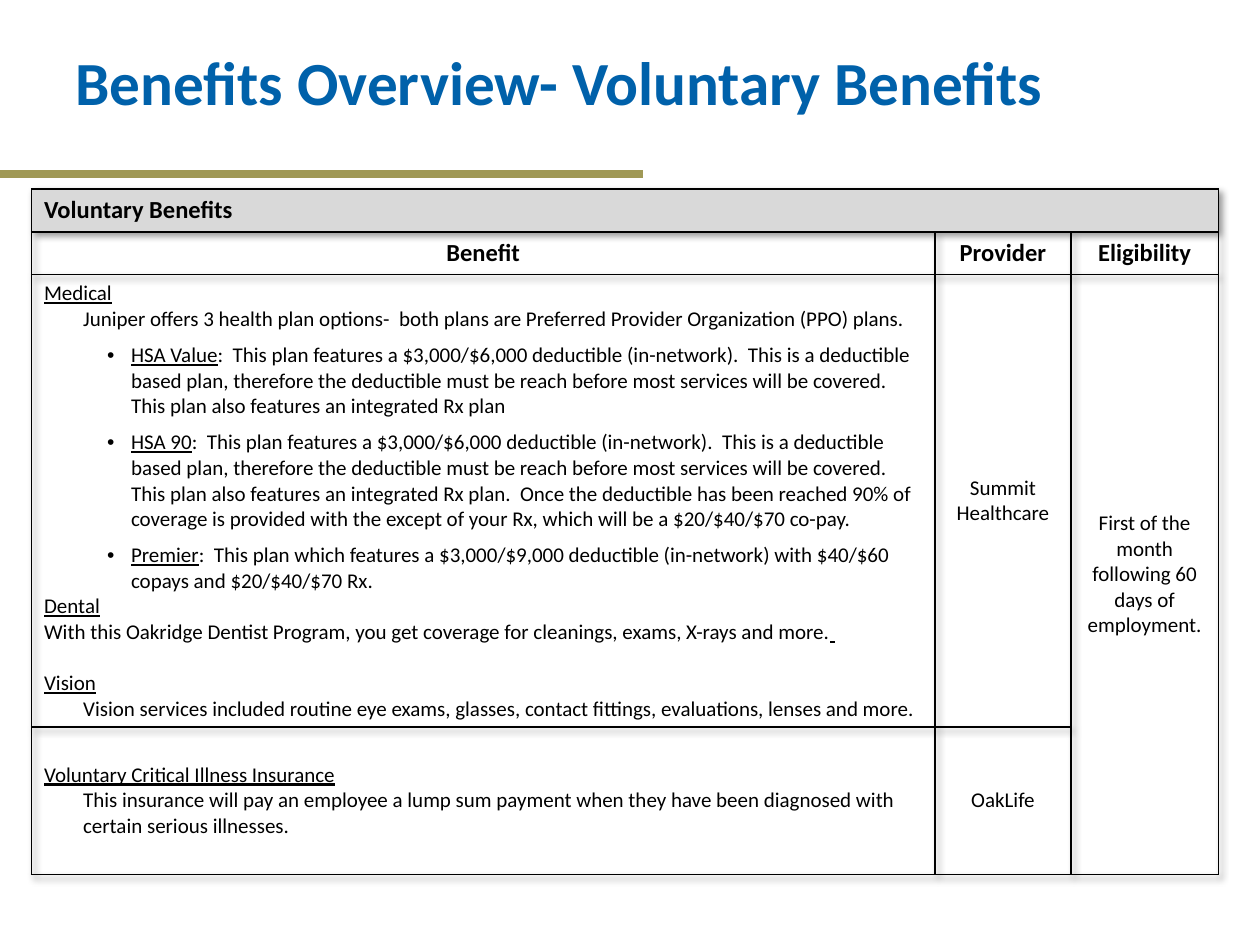
from lxml import etree
from pptx import Presentation
from pptx.dml.color import RGBColor
from pptx.enum.shapes import MSO_CONNECTOR
from pptx.enum.text import MSO_ANCHOR, PP_ALIGN
from pptx.oxml import parse_xml
from pptx.oxml.ns import nsdecls, qn
from pptx.util import Inches, Pt

STRAIGHT = MSO_CONNECTOR.STRAIGHT
MIDDLE, TOP = MSO_ANCHOR.MIDDLE, MSO_ANCHOR.TOP
LEFT, CENTER = PP_ALIGN.LEFT, PP_ALIGN.CENTER

FONT = "Calibri"
BLACK, BLUE, OLIVE, GRAY = "000000", "0061AA", "A09956", "D9D9D9"
COLUMN_WIDTHS = [7.17, 1.08, 1.17]
ROW_HEIGHTS = [0.34, 0.34, 3.59, 1.17]
BORDER_SIDES = ["lnL", "lnR", "lnT", "lnB"]

DEDUCTIBLE = (
    ":  This plan features a $3,000/$6,000 deductible (in-network).  This is a deductible "
    "based plan, therefore the deductible must be reach before most services will be covered.  "
    "This plan also features an integrated Rx plan"
)
COVERAGE = (
    ".  Once the deductible has been reached 90% of coverage is provided with the except of "
    "your Rx, which will be a $20/$40/$70 co-pay."
)
PREMIER = (
    ":  This plan which features a $3,000/$9,000 deductible (in-network) with $40/$60 copays "
    "and $20/$40/$70 Rx."
)
HEALTH_INTRO = (
    "Juniper offers 3 health plan options-  both plans are Preferred Provider Organization "
    "(PPO) plans."
)
DENTAL = (
    "With this Oakridge Dentist Program, you get coverage for cleanings, exams, X-rays and more."
)
VISION = (
    "Vision services included routine eye exams, glasses, contact fittings, evaluations, "
    "lenses and more."
)
ILLNESS = (
    "This insurance will pay an employee a lump sum payment when they have been diagnosed "
    "with certain serious illnesses."
)


def color(hex_value):
    return RGBColor.from_string(hex_value)


def heading(text, before=0):
    return {"runs": [(text, True)], "before": before}


def detail(text):
    return {"runs": [(text, False)], "margin": 0.31}


def plan(name, text):
    return {"runs": [(name, True), (text, False)], "margin": 0.69, "hanging": 0.19, "before": 6}


def write_paragraph(paragraph, runs, size=12, bold=False, hue=BLACK, align=LEFT,
                    margin=0, hanging=0, before=0):
    properties = paragraph._p.get_or_add_pPr()
    properties.set("marL", str(Inches(margin)))
    properties.set("indent", str(-Inches(hanging)))
    if hanging:
        etree.SubElement(properties, qn("a:buFont")).set("typeface", "Arial")
        etree.SubElement(properties, qn("a:buChar")).set("char", "•")
    paragraph.alignment = align
    paragraph.space_before = Pt(before)
    for text, underlined in runs:
        run = paragraph.add_run()
        run.text = text
        run.font.name, run.font.size = FONT, Pt(size)
        run.font.bold, run.font.underline = bold, underlined
        run.font.color.rgb = color(hue)


def write_text(frame, content, **style):
    paragraphs = [{"runs": [(content, False)]}] if isinstance(content, str) else content
    for index, entry in enumerate(paragraphs):
        paragraph = frame.add_paragraph() if index else frame.paragraphs[0]
        write_paragraph(paragraph, **entry, **style)


class BenefitsSlide:
    """Holds the current slide and draws each kind of element on it."""

    def __init__(self, presentation):
        self.slide = presentation.slides.add_slide(presentation.slide_layouts[6])

    def title(self, text, left, top, width, height):
        box = self.slide.shapes.add_textbox(
            Inches(left), Inches(top), Inches(width), Inches(height))
        box.text_frame.word_wrap = True
        box.text_frame.vertical_anchor = TOP
        write_text(box.text_frame, text, size=35, bold=True, hue=BLUE)

    def rule(self, start, end, y, width, hue):
        line = self.slide.shapes.add_connector(
            STRAIGHT, Inches(start), Inches(y), Inches(end), Inches(y))
        line.line.color.rgb = color(hue)
        line.line.width = Pt(width)
        etree.SubElement(line._element.spPr, qn("a:effectLst"))

    def table(self, left, top):
        frame = self.slide.shapes.add_table(
            len(ROW_HEIGHTS), len(COLUMN_WIDTHS), Inches(left), Inches(top),
            Inches(sum(COLUMN_WIDTHS)), Inches(sum(ROW_HEIGHTS)))
        table = frame.table
        table.first_row = table.horz_banding = False
        for column, width in zip(table.columns, COLUMN_WIDTHS):
            column.width = Inches(width)
        for row, height in zip(table.rows, ROW_HEIGHTS):
            row.height = Inches(height)
            for cell in row.cells:
                self.borders(cell)
                cell.fill.background()
        self.shadow(table)
        return table

    def borders(self, cell):
        properties = cell._tc.get_or_add_tcPr()
        for side in BORDER_SIDES:
            properties.append(parse_xml(
                f'<a:{side} {nsdecls("a")} w="{Pt(1)}"><a:solidFill>'
                f'<a:srgbClr val="{BLACK}"/></a:solidFill></a:{side}>'))

    def shadow(self, table):
        table._tbl.tblPr.insert(0, parse_xml(
            f'<a:effectLst {nsdecls("a")}><a:outerShdw blurRad="{Pt(4)}" dist="{Pt(3)}" '
            f'dir="2700000" algn="tl" rotWithShape="0"><a:srgbClr val="{BLACK}">'
            '<a:alpha val="40000"/></a:srgbClr></a:outerShdw></a:effectLst>'))

    def cell(self, cell, content, **style):
        cell.vertical_anchor = MIDDLE
        write_text(cell.text_frame, content, **style)


def main():
    presentation = Presentation()
    presentation.slide_width, presentation.slide_height = Inches(10), Inches(7.5)
    page = BenefitsSlide(presentation)
    page.rule(0, 5.1, 1.38, 4.5, OLIVE)
    page.title("Benefits Overview- Voluntary Benefits", 0.5, 0.3, 9, 1.25)

    benefits = page.table(0.25, 1.5)
    banner = benefits.cell(0, 0)
    banner.merge(benefits.cell(0, 2))
    banner.fill.solid()
    banner.fill.fore_color.rgb = color(GRAY)
    page.cell(banner, "Voluntary Benefits", size=14, bold=True)
    for index, label in enumerate(["Benefit", "Provider", "Eligibility"]):
        page.cell(benefits.cell(1, index), label, size=14, bold=True, align=CENTER)

    page.cell(benefits.cell(2, 0), [
        heading("Medical"),
        detail(HEALTH_INTRO),
        plan("HSA Value", DEDUCTIBLE),
        plan("HSA 90", DEDUCTIBLE + COVERAGE),
        plan("Premier", PREMIER),
        heading("Dental"),
        {"runs": [(DENTAL, False), (" ", True)]},
        heading("Vision", before=14.65),
        detail(VISION),
    ])
    page.cell(benefits.cell(3, 0), [
        heading("Voluntary Critical Illness Insurance"),
        detail(ILLNESS),
    ])
    for index, provider in enumerate(["Summit Healthcare", "OakLife"], start=2):
        page.cell(benefits.cell(index, 1), provider, align=CENTER)
    eligibility = benefits.cell(2, 2)
    eligibility.merge(benefits.cell(3, 2))
    page.cell(eligibility, "First of the month following 60 days of employment.", align=CENTER)
    presentation.save("out.pptx")


if __name__ == "__main__":
    main()
